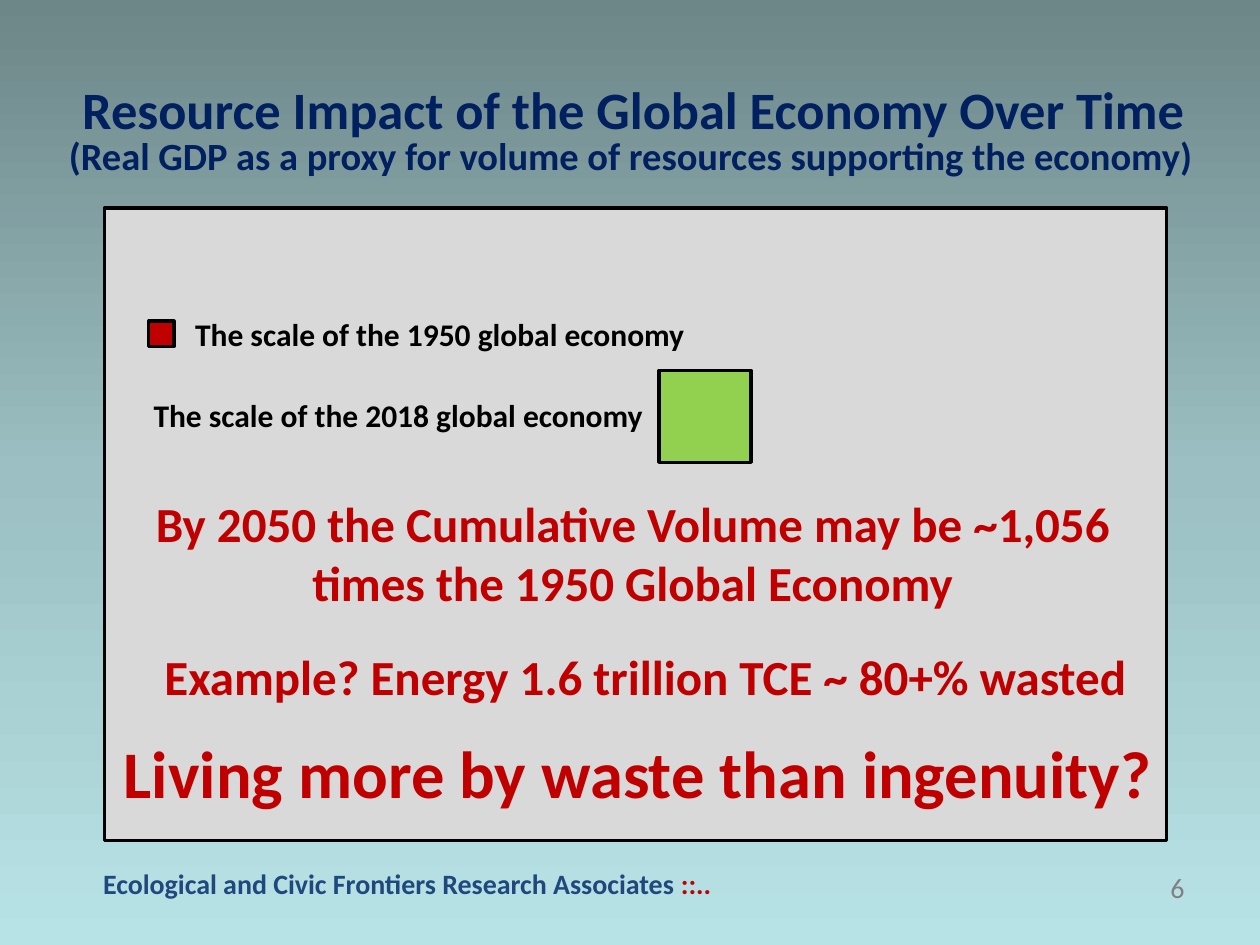
from copy import deepcopy
from dataclasses import dataclass
from pptx import Presentation
from pptx.dml.color import RGBColor
from pptx.enum.shapes import MSO_SHAPE
from pptx.enum.text import MSO_ANCHOR, PP_ALIGN
from pptx.slide import Slide
from pptx.util import Pt

RECT = MSO_SHAPE.RECTANGLE
TOP = MSO_ANCHOR.TOP
LEFT, MID, RIGHT = PP_ALIGN.LEFT, PP_ALIGN.CENTER, PP_ALIGN.RIGHT
SCALE = 9144


@dataclass(frozen=True)
class Theme:
    font: str = "Calibri"
    navy: str = "002060"
    blue: str = "1F497D"
    red: str = "C00000"
    green: str = "92D050"
    black: str = "000000"
    panel: str = "D9D9D9"
    gray: str = "808080"
    sky: tuple[str, ...] = ("6D8688", "9BBFC2", "B8E3E6")
    title: int = 30
    sub: int = 22
    label: int = 18
    claim: int = 28
    punch: int = 38
    foot: int = 16
    line: int = 2


@dataclass(frozen=True)
class Area:
    x: int
    y: int
    w: int
    h: int

    def emu(self) -> tuple[int, ...]:
        return tuple(n * SCALE for n in (self.x, self.y, self.w, self.h))


@dataclass(frozen=True)
class Box:
    area: Area
    fill: str


@dataclass(frozen=True)
class Run:
    text: str
    color: str
    bold: bool = True


@dataclass(frozen=True)
class Text:
    area: Area
    size: int
    runs: tuple[Run, ...]
    align: PP_ALIGN = MID
    wrap: bool = False


T = Theme()

BOXES = (
    Box(Area(83, 165, 843, 502), T.panel),
    Box(Area(118, 255, 20, 20), T.red),
    Box(Area(523, 294, 73, 73), T.green),
)

TEXTS = (
    Text(Area(51, 56, 904, 61), T.title,
         (Run("Resource Impact of the Global Economy Over Time", T.navy),)),
    Text(Area(39, 100, 923, 47), T.sub,
         (Run("(Real GDP as a proxy for volume of resources supporting the economy)", T.navy),)),
    Text(Area(145, 245, 428, 40), T.label,
         (Run("The scale of the 1950 global economy", T.black),), LEFT),
    Text(Area(112, 309, 472, 40), T.label,
         (Run("The scale of the 2018 global economy", T.black),), LEFT),
    Text(Area(98, 387, 808, 104), T.claim,
         (Run("By 2050 the Cumulative Volume may be ~1,056 times the 1950 Global Economy", T.red),),
         wrap=True),
    Text(Area(108, 508, 808, 57), T.claim,
         (Run("Example? Energy 1.6 trillion TCE ~ 80+% wasted", T.red),)),
    Text(Area(88, 576, 837, 74), T.punch,
         (Run("Living more by waste than ingenuity?", T.red),)),
    Text(Area(72, 683, 557, 67), T.foot,
         (Run("Ecological and Civic Frontiers Research Associates ", T.blue),
          Run("::..", T.red)), LEFT),
    Text(Area(842, 686, 108, 50), T.foot, (Run("6", T.gray, False),), RIGHT),
)


def rgb(code: str) -> RGBColor:
    return RGBColor.from_string(code)


def paint(slide: Slide) -> None:
    fill = slide.background.fill
    fill.gradient()
    fill.gradient_angle = 270
    stops = slide.element.xpath(".//a:gsLst")[0]
    stops.append(deepcopy(stops[0]))
    for i, (stop, code) in enumerate(zip(fill.gradient_stops, T.sky)):
        stop.color.rgb = rgb(code)
        stop.position = i / 2


def draw(slide: Slide, box: Box) -> None:
    shape = slide.shapes.add_shape(RECT, *box.area.emu())
    shape.shadow.inherit = False
    shape.fill.solid()
    shape.fill.fore_color.rgb = rgb(box.fill)
    shape.line.color.rgb = rgb(T.black)
    shape.line.width = Pt(T.line)


def write(slide: Slide, text: Text) -> None:
    frame = slide.shapes.add_textbox(*text.area.emu()).text_frame
    frame.word_wrap = text.wrap
    frame.vertical_anchor = TOP
    para = frame.paragraphs[0]
    para.alignment = text.align
    for item in text.runs:
        run = para.add_run()
        run.text = item.text
        run.font.name = T.font
        run.font.size = Pt(text.size)
        run.font.bold = item.bold
        run.font.color.rgb = rgb(item.color)


def main() -> None:
    deck = Presentation()
    deck.slide_width = 1000 * SCALE
    deck.slide_height = 750 * SCALE
    slide = deck.slides.add_slide(deck.slide_layouts[6])
    paint(slide)
    for box in BOXES:
        draw(slide, box)
    for text in TEXTS:
        write(slide, text)
    deck.save("out.pptx")


if __name__ == "__main__":
    main()
